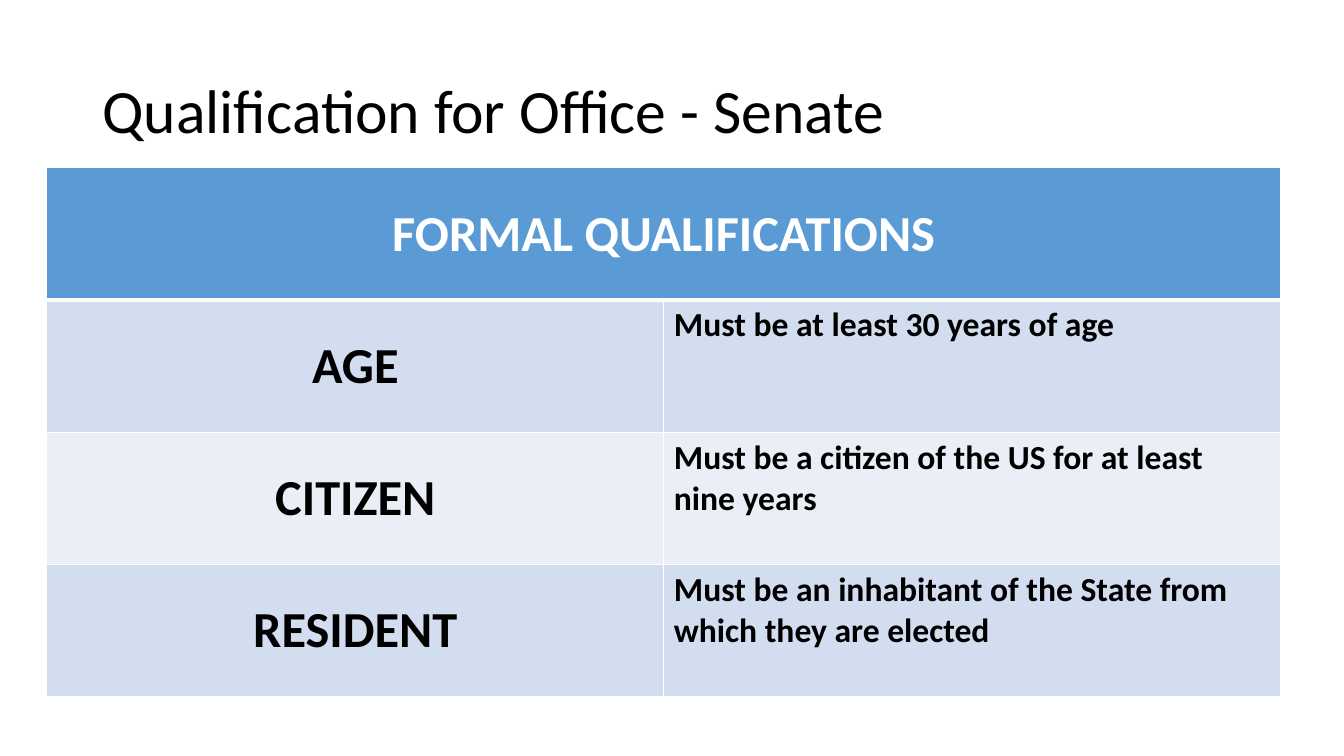
from dataclasses import dataclass

from lxml.etree import SubElement
from pptx import Presentation
from pptx.dml.color import RGBColor
from pptx.enum.text import MSO_ANCHOR, MSO_AUTO_SIZE, PP_ALIGN
from pptx.oxml.ns import qn
from pptx.util import Cm, Pt


@dataclass(frozen=True)
class Theme:
    """Hold the colours, font and sizes of the slide."""
    font: str = "Calibri"
    black: str = "000000"
    white: str = "FFFFFF"
    header: str = "5B9BD5"
    bands: tuple = ("D2DEEF", "EAEFF7")
    title_size: int = 44
    label_size: int = 36
    body_size: int = 24
    thin_line: int = 1
    header_line: int = 3


THEME = Theme()
HEADING = "FORMAL QUALIFICATIONS"
QUALIFICATIONS = (
    ("AGE", "Must be at least 30 years of age"),
    ("CITIZEN", "Must be a citizen of the US for at least nine years"),
    ("RESIDENT", "Must be an inhabitant of the State from which they are elected"),
)


def write_text(text_frame, text, size=THEME.body_size, color=THEME.black, bold=True,
               align=PP_ALIGN.LEFT, line_spacing=1.0):
    """Write one formatted paragraph into a text frame."""
    paragraph = text_frame.paragraphs[0]
    paragraph.alignment = align
    paragraph.line_spacing = line_spacing
    run = paragraph.add_run()
    run.text = text
    run.font.name = THEME.font
    run.font.size = Pt(size)
    run.font.bold = bold
    run.font.color.rgb = RGBColor.from_string(color)


def style_cell(cell, fill, top=THEME.thin_line, bottom=THEME.thin_line):
    """Give a cell its white borders and its fill."""
    properties = cell._tc.get_or_add_tcPr()
    widths = {"a:lnL": THEME.thin_line, "a:lnR": THEME.thin_line, "a:lnT": top, "a:lnB": bottom}
    for tag, width in widths.items():
        line = SubElement(properties, qn(tag), w=str(Pt(width)))
        line_fill = SubElement(line, qn("a:solidFill"))
        SubElement(line_fill, qn("a:srgbClr"), val=THEME.white)
    cell.fill.solid()
    cell.fill.fore_color.rgb = RGBColor.from_string(fill)


def add_title(slide, left, top, width, height):
    """Place the slide title in the given box."""
    title = slide.shapes.title
    title.left, title.top, title.width, title.height = left, top, width, height
    title.text_frame.auto_size = MSO_AUTO_SIZE.NONE
    title.text_frame.word_wrap = True
    title.text_frame.vertical_anchor = MSO_ANCHOR.MIDDLE
    write_text(title.text_frame, "Qualification for Office - Senate", size=THEME.title_size,
               bold=False, line_spacing=0.9)


def add_qualifications(slide, left, top, width, height):
    """Place the table of qualifications in the given box."""
    row_count = len(QUALIFICATIONS) + 1
    table = slide.shapes.add_table(row_count, 2, left, top, width, height).table

    for cell in table.rows[0].cells:
        style_cell(cell, THEME.header, bottom=THEME.header_line)
    heading = table.cell(0, 0)
    heading.merge(table.cell(0, 1))
    heading.vertical_anchor = MSO_ANCHOR.MIDDLE
    write_text(heading.text_frame, HEADING, size=THEME.label_size, color=THEME.white,
               align=PP_ALIGN.CENTER)

    for index, (label, requirement) in enumerate(QUALIFICATIONS):
        label_cell, requirement_cell = table.rows[index + 1].cells
        for cell in (label_cell, requirement_cell):
            style_cell(cell, THEME.bands[index % 2],
                       top=THEME.thin_line if index else THEME.header_line)
        label_cell.vertical_anchor = MSO_ANCHOR.MIDDLE
        write_text(label_cell.text_frame, label, size=THEME.label_size, align=PP_ALIGN.CENTER)
        write_text(requirement_cell.text_frame, requirement)


def main():
    """Build and save the presentation."""
    presentation = Presentation()
    presentation.slide_width, presentation.slide_height = Cm(33.87), Cm(19.05)
    slide = presentation.slides.add_slide(presentation.slide_layouts[5])
    add_title(slide, Cm(2.33), Cm(1.01), Cm(29.21), Cm(3.68))
    add_qualifications(slide, Cm(1.18), Cm(4.23), Cm(31.1), Cm(13.32))
    presentation.save("out.pptx")


if __name__ == "__main__":
    main()
